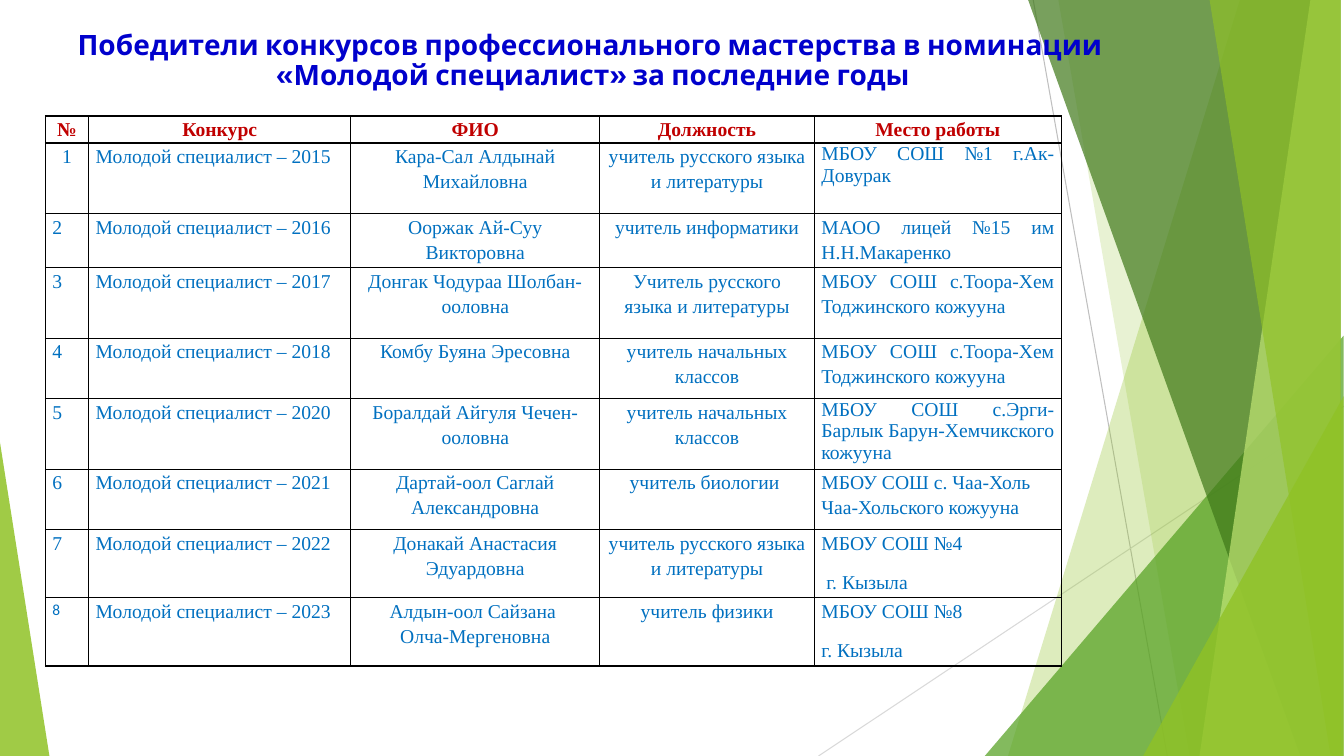
from dataclasses import dataclass
from typing import NamedTuple

from lxml import etree
from pptx import Presentation
from pptx import util as u
from pptx.dml import color
from pptx.enum import shapes, text
from pptx.oxml import ns

CELL = u.Inches(0.1)
COLUMNS, ROWS = 133.33, 75
COLORS = {
    "title": "0000CC", "header": "C00000", "body": "0070C0", "border": "000000",
    "ray": "BFBFBF", "pale_ray": "D9D9D9", "lime": "90C226", "green": "54A021",
    "forest": "3F7819", "light": "C0E474",
}
SERIF = "Times New Roman"
LEFT, CENTER, JUSTIFY = text.PP_ALIGN.LEFT, text.PP_ALIGN.CENTER, text.PP_ALIGN.JUSTIFY


class Ray(NamedTuple):
    start: tuple[float, float]
    end: tuple[float, float]
    color: str


class Band(NamedTuple):
    top: float
    bottom: float
    color: str
    opacity: int


class Triangle(NamedTuple):
    left: float
    top: float
    width: float
    apex: float
    color: str
    opacity: int


@dataclass
class Winner:
    year: int
    name: str
    post: str
    place: str
    height: float
    place_align: text.PP_ALIGN = JUSTIFY
    place_spacing: float = 1.15
    after: float = 0


@dataclass
class CellStyle:
    align: text.PP_ALIGN
    color: str = "body"
    bold: bool = False
    size: float = 14
    font: str = SERIF
    spacing: float = 1.15
    after: float = 0


DECOR = [
    Ray((102.5, 0), (115.8, ROWS), "ray"),
    Ray((COLUMNS, 40.3), (81.2, ROWS), "pale_ray"),
    Band(122.8, 100.4, "lime", 30),
    Band(105, 118.3, "lime", 20),
    Triangle(97.7, 33.3, 35.6, 1, "green", 72),
    Band(102.1, 129.1, "forest", 70),
    Band(130.3, 119.2, "light", 70),
    Band(119.6, 131.8, "lime", 65),
    Triangle(113.4, 39.3, 19.9, 1, "lime", 80),
    Triangle(0, 43.9, 4.9, 0, "lime", 85),
]
TITLE = "Победители конкурсов профессионального мастерства в номинации \n«Молодой специалист» за последние годы"
HEADERS = ["№", "Конкурс", "ФИО", "Должность", "Место работы"]
COLUMN_WIDTHS = [4.3, 26, 24.7, 21.3, 24.5]
HEADER_HEIGHT = 2.4
WINNERS = [
    Winner(2015, "Кара-Сал Алдынай Михайловна", "учитель русского языка и литературы",
           "МБОУ СОШ №1 г.Ак-Довурак", 7, place_spacing=1),
    Winner(2016, "Ооржак Ай-Суу Викторовна", "учитель информатики",
           "МАОО лицей №15 им Н.Н.Макаренко", 5.1),
    Winner(2017, "Донгак Чодураа Шолбан-ооловна", "Учитель русского языка и литературы",
           "МБОУ СОШ с.Тоора-Хем Тоджинского кожууна", 7),
    Winner(2018, "Комбу Буяна Эресовна", "учитель начальных классов",
           "МБОУ СОШ с.Тоора-Хем Тоджинского кожууна", 6),
    Winner(2020, "Боралдай Айгуля Чечен-ооловна", "учитель начальных классов",
           "МБОУ СОШ с.Эрги-Барлык Барун-Хемчикского кожууна", 6.6, place_spacing=1),
    Winner(2021, "Дартай-оол Саглай Александровна", "учитель биологии ",
           "МБОУ СОШ с. Чаа-Холь Чаа-Хольского кожууна", 6, LEFT, after=10),
    Winner(2022, "Донакай Анастасия Эдуардовна", "учитель русского языка и литературы",
           "МБОУ СОШ №4\n г. Кызыла", 4.9, LEFT, after=10),
    Winner(2023, "Алдын-оол Сайзана \nОлча-Мергеновна", "учитель физики",
           "МБОУ СОШ №8\nг. Кызыла", 6.5, LEFT, after=10),
]


def grid(*lengths: float) -> list[u.Emu]:
    return [u.Emu(round(length * CELL)) for length in lengths]


def rgb(name: str) -> color.RGBColor:
    return color.RGBColor.from_string(COLORS[name])


def draw_ray(page, ray: Ray) -> None:
    line = page.shapes.add_connector(shapes.MSO_CONNECTOR.STRAIGHT, *grid(*ray.start, *ray.end))
    line.line.color.rgb = rgb(ray.color)
    line.line.width = u.Pt(0.75)
    etree.SubElement(line._element.spPr, ns.qn("a:effectLst"))


def paint(shape, name: str, opacity: int) -> None:
    shape.shadow.inherit = False
    shape.line.fill.background()
    shape.fill.solid()
    shape.fill.fore_color.rgb = rgb(name)
    tint = shape._element.spPr.find(".//" + ns.qn("a:srgbClr"))
    etree.SubElement(tint, ns.qn("a:alpha"), val=str(opacity * 1000))


def draw_band(page, band: Band) -> None:
    outline = page.shapes.build_freeform(band.top, 0, scale=float(CELL))
    outline.add_line_segments([(COLUMNS, 0), (COLUMNS, ROWS), (band.bottom, ROWS)], close=True)
    paint(outline.convert_to_shape(), band.color, band.opacity)


def draw_triangle(page, item: Triangle) -> None:
    frame = grid(item.left, item.top, item.width, ROWS - item.top)
    shape = page.shapes.add_shape(shapes.MSO_SHAPE.ISOSCELES_TRIANGLE, *frame)
    shape.adjustments[0] = item.apex
    paint(shape, item.color, item.opacity)


def format_text(frame, style: CellStyle) -> None:
    for para in frame.paragraphs:
        para.alignment = style.align
        para.line_spacing = style.spacing
        para.space_after = u.Pt(style.after)
        for span in para.runs:
            span.font.name = style.font
            span.font.size = u.Pt(style.size)
            span.font.bold = style.bold
            span.font.color.rgb = rgb(style.color)


def draw_title(page) -> None:
    box = page.shapes.add_textbox(*grid(2.8, 2.6, 112.1, 8))
    box.text_frame.word_wrap = True
    box.text_frame.paragraphs[0].text = TITLE
    format_text(box.text_frame, CellStyle(CENTER, "title", True, 20, "Cabin", 0.9))


def fill_cell(cell, words: str, style: CellStyle) -> None:
    cell.margin_left = cell.margin_right = u.Inches(0.07)
    cell.margin_top = cell.margin_bottom = 0
    cell.text_frame.text = words
    format_text(cell.text_frame, style)
    properties = cell._tc.get_or_add_tcPr()
    for side in ("lnL", "lnR", "lnT", "lnB"):
        edge = etree.SubElement(properties, ns.qn(f"a:{side}"), w=str(u.Pt(1)))
        solid = etree.SubElement(edge, ns.qn("a:solidFill"))
        etree.SubElement(solid, ns.qn("a:srgbClr"), val=COLORS["border"])
    cell.fill.background()


def winner_cells(number: int, winner: Winner) -> list[tuple[str, CellStyle]]:
    number_style = CellStyle(CENTER if number == 1 else JUSTIFY)
    if number == len(WINNERS):
        number_style.size, number_style.font = 11, "Calibri"
    return [
        (str(number), number_style),
        (f"Молодой специалист – {winner.year}", CellStyle(LEFT)),
        (winner.name, CellStyle(CENTER)),
        (winner.post, CellStyle(CENTER, after=winner.after)),
        (winner.place, CellStyle(winner.place_align, spacing=winner.place_spacing, after=winner.after)),
    ]


def draw_table(page) -> None:
    heights = [HEADER_HEIGHT] + [winner.height for winner in WINNERS]
    frame = grid(4.5, 11.5, sum(COLUMN_WIDTHS), sum(heights))
    table = page.shapes.add_table(len(heights), len(HEADERS), *frame).table
    table.first_row = table.horz_banding = False
    for column, width in zip(table.columns, grid(*COLUMN_WIDTHS)):
        column.width = width
    for row, height in zip(table.rows, grid(*heights)):
        row.height = height
    content = [[(header, CellStyle(CENTER, "header", True)) for header in HEADERS]]
    content += [winner_cells(number, winner) for number, winner in enumerate(WINNERS, 1)]
    for row, items in zip(table.rows, content):
        for cell, (words, style) in zip(row.cells, items):
            fill_cell(cell, words, style)


def main() -> None:
    deck = Presentation()
    deck.slide_width, deck.slide_height = grid(COLUMNS, ROWS)
    page = deck.slides.add_slide(deck.slide_layouts[6])
    painters = {Ray: draw_ray, Band: draw_band, Triangle: draw_triangle}
    for item in DECOR:
        painters[type(item)](page, item)
    draw_title(page)
    draw_table(page)
    deck.save("out.pptx")


if __name__ == "__main__":
    main()
